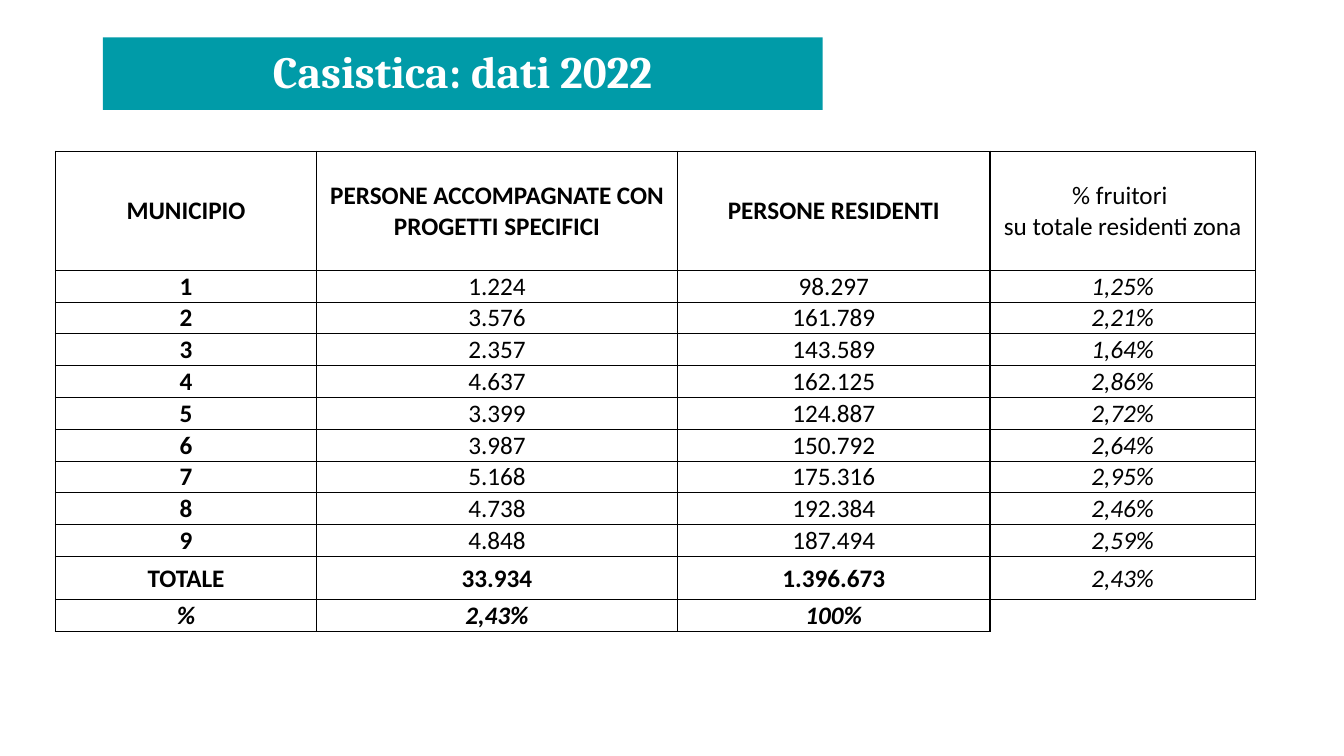
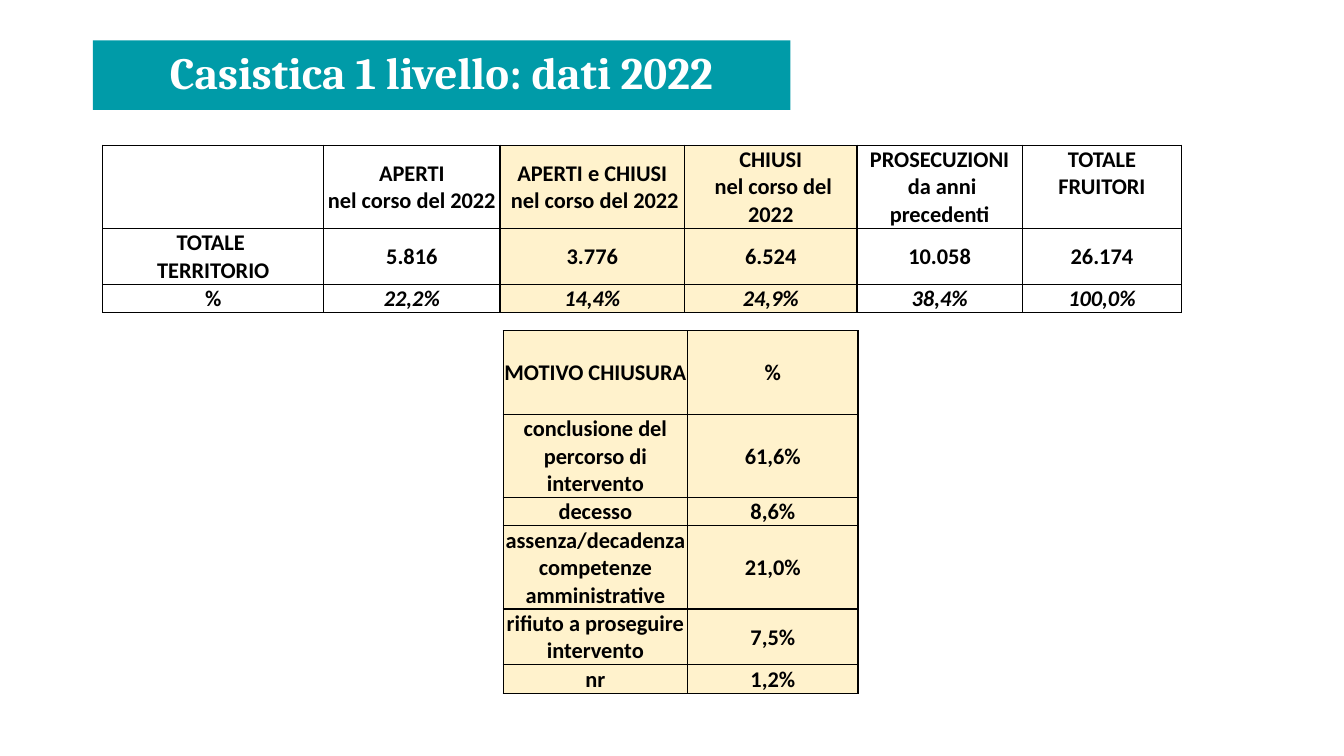
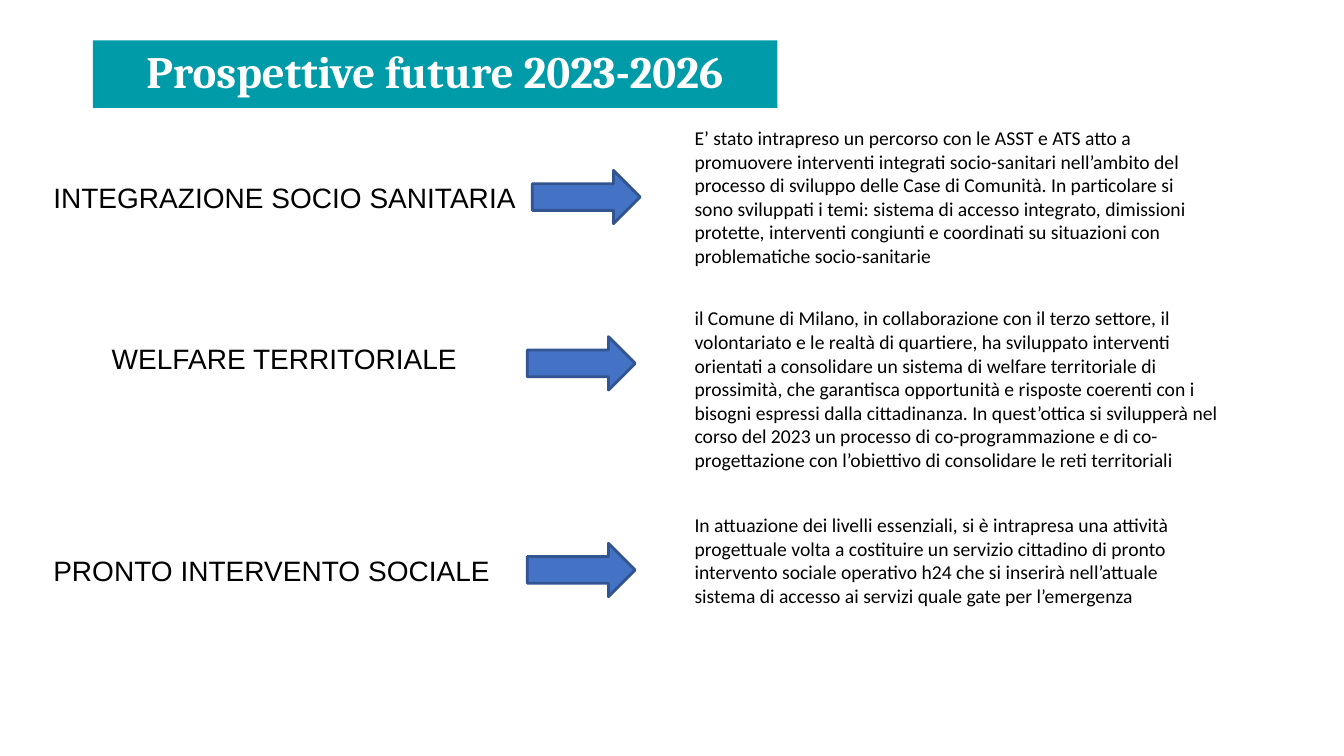
from lxml import etree
from pptx import Presentation
from pptx.dml.color import RGBColor
from pptx.enum import shapes, text
from pptx.oxml.ns import qn
from pptx.util import Inches, Pt

COLORS = {
    "teal": "009BA8",
    "white": "FFFFFF",
    "black": "000000",
    "cream": "FFF2CC",
    "arrow": "4472C4",
    "arrow_line": "325491",
}
THIN, THICK = 0.5, 1


def rgb(name):
    return RGBColor.from_string(COLORS[name])


def add_text(p, content, font, size, color="black", bold=False, italic=False):
    """Write one paragraph, a run for each line."""
    for i, line in enumerate(content.split("\n")):
        if i:
            p.add_line_break()
        r = p.add_run()
        r.text = line
        r.font.name, r.font.size = font, Pt(size)
        r.font.bold, r.font.italic = bold, italic
        r.font.color.rgb = rgb(color)


# Shared title band
def add_title_slide(prs, title, box):
    s = prs.slides.add_slide(prs.slide_layouts[5])
    sp = s.shapes.title
    sp.left, sp.top, sp.width, sp.height = (Inches(v) for v in box)
    sp.fill.solid()
    sp.fill.fore_color.rgb = rgb("teal")
    tf = sp.text_frame
    tf.auto_size = text.MSO_AUTO_SIZE.NONE
    tf.word_wrap = True
    tf.vertical_anchor = text.MSO_ANCHOR.MIDDLE
    p = tf.paragraphs[0]
    p.alignment = text.PP_ALIGN.CENTER
    p.line_spacing = 0.9
    add_text(p, title, "Cambria", 32, "white", bold=True)
    return s


# Tables
def set_borders(cell, left, right, top, bottom):
    tc_pr = cell._tc.get_or_add_tcPr()
    for side, width in zip("LRTB", (left, right, top, bottom)):
        ln = etree.SubElement(tc_pr, qn(f"a:ln{side}"), w=str(int(Pt(width))))
        if width:
            fill = etree.SubElement(ln, qn("a:solidFill"))
            etree.SubElement(fill, qn("a:srgbClr"), val=COLORS["black"])
        else:
            etree.SubElement(ln, qn("a:noFill"))


def fill_cell(cell, content, size, bold, italic, fill):
    cell.margin_left = cell.margin_right = cell.margin_top = Inches(0.01)
    cell.margin_bottom = 0
    cell.vertical_anchor = text.MSO_ANCHOR.MIDDLE
    if fill:
        cell.fill.solid()
        cell.fill.fore_color.rgb = rgb(fill)
    else:
        cell.fill.background()
    if content:
        p = cell.text_frame.paragraphs[0]
        p.alignment = text.PP_ALIGN.CENTER
        add_text(p, content, "Calibri", size, bold=bold, italic=italic)


def add_grid(s, left, top, cols, heights, rows, size, style, borders):
    """style(r, c) gives bold, italic, fill; borders(r, c) gives four widths."""
    frame = s.shapes.add_table(len(rows), len(cols), Inches(left), Inches(top),
                               Inches(sum(cols)), Inches(sum(heights)))
    table = frame.table
    table.first_row = table.horz_banding = False
    for column, width in zip(table.columns, cols):
        column.width = Inches(width)
    for r, (values, height) in enumerate(zip(rows, heights)):
        table.rows[r].height = Inches(height)
        for c, value in enumerate(values):
            cell = table.cell(r, c)
            set_borders(cell, *borders(r, c))
            fill_cell(cell, value, size, *style(r, c))
    return table


def all_thick(r, c):
    return (THICK,) * 4


# Slide 1: cases by district
DISTRICTS = [
    ("MUNICIPIO", "PERSONE ACCOMPAGNATE CON PROGETTI SPECIFICI",
     "PERSONE RESIDENTI", "% fruitori \nsu totale residenti zona"),
    ("1", "1.224", "98.297", "1,25%"),
    ("2", "3.576", "161.789", "2,21%"),
    ("3", "2.357", "143.589", "1,64%"),
    ("4", "4.637", "162.125", "2,86%"),
    ("5", "3.399", "124.887", "2,72%"),
    ("6", "3.987", "150.792", "2,64%"),
    ("7", "5.168", "175.316", "2,95%"),
    ("8", "4.738", "192.384", "2,46%"),
    ("9", "4.848", "187.494", "2,59%"),
    ("TOTALE", "33.934", "1.396.673", "2,43%"),
    ("%", "2,43%", "100%", ""),
]


def district_style(r, c):
    last = len(DISTRICTS) - 1
    bold = c < 3 and (c == 0 or r in (0, last - 1, last))
    italic = r == last or (c == 3 and r > 0)
    return bold, italic, "white" if r == last - 1 else None


def district_borders(r, c):
    last = len(DISTRICTS) - 1
    if (r, c) == (last, 3):
        return THICK, 0, THICK, 0
    return (THIN if c == 2 else THICK,
            THIN if c == 1 else THICK,
            THIN if 1 < r < last - 1 else THICK,
            THIN if 0 < r < last - 2 else THICK)


def build_districts(prs):
    s = add_title_slide(prs, "Casistica: dati 2022", (1.02, 0.37, 7.14, 0.72))
    add_grid(s, 0.55, 1.5, [2.59, 3.58, 3.1, 2.63],
             [1.18] + [0.29] * 9 + [0.43, 0.25],
             DISTRICTS, 18, district_style, district_borders)


# Slide 2: first-level cases and reasons for closing
CASES = [
    ("", "APERTI\nnel corso del 2022", "APERTI e CHIUSI\n nel corso del 2022",
     "CHIUSI\n nel corso del 2022", "PROSECUZIONI\n da anni precedenti",
     "TOTALE FRUITORI"),
    ("TOTALE \nTERRITORIO", "5.816", "3.776", "6.524", "10.058", "26.174"),
    ("%", "22,2%", "14,4%", "24,9%", "38,4%", "100,0%"),
]
REASONS = [
    ("MOTIVO CHIUSURA", "%"),
    ("conclusione del percorso di intervento", "61,6%"),
    ("decesso", "8,6%"),
    ("assenza/decadenza competenze amministrative", "21,0%"),
    ("rifiuto a proseguire intervento", "7,5%"),
    ("nr", "1,2%"),
]


def case_style(r, c):
    fill = "cream" if c in (2, 3) else "white" if r == 1 else None
    return True, r == 2 and c > 0, fill


def reason_style(r, c):
    return True, False, "cream"


def build_cases(prs):
    s = add_title_slide(prs, "Casistica 1 livello: dati 2022",
                        (0.92, 0.4, 6.92, 0.69))
    cases = add_grid(s, 1.02, 1.44, [2.19, 1.75, 1.83, 1.71, 1.64, 1.58],
                     [0.77, 0.49, 0.28], CASES, 16, case_style, all_thick)
    cases.cell(0, 5).vertical_anchor = text.MSO_ANCHOR.TOP
    add_grid(s, 4.99, 3.28, [1.83, 1.69], [0.83, 0.53, 0.27, 0.79, 0.27, 0.27],
             REASONS, 16, reason_style, all_thick)


# Slide 3: future prospects; each box is left, top, width, height
PROSPECTS = [
    ("INTEGRAZIONE SOCIO SANITARIA", (0.43, 1.74, 4.85, 0.44), (5.28, 1.69),
     "E’ stato intrapreso un percorso con le ASST e ATS atto a promuovere "
     "interventi integrati socio-sanitari nell’ambito del processo di sviluppo "
     "delle Case di Comunità. In particolare si sono sviluppati i temi: sistema "
     "di accesso integrato, dimissioni protette, interventi congiunti e "
     "coordinati su situazioni con problematiche socio-sanitarie",
     (6.79, 1.2, 5.23, 1.51)),
    ("WELFARE TERRITORIALE", (1.01, 3.34, 3.68, 0.44), (5.23, 3.34),
     "il Comune di Milano, in collaborazione con il terzo settore, il "
     "volontariato e le realtà di quartiere, ha sviluppato interventi orientati "
     "a consolidare un sistema di welfare territoriale di prossimità, che "
     "garantisca opportunità e risposte coerenti con i bisogni espressi dalla "
     "cittadinanza. In quest’ottica si svilupperà nel corso del 2023 un processo "
     "di co-programmazione e di co-progettazione con l’obiettivo di consolidare "
     "le reti territoriali",
     (6.79, 2.99, 5.41, 1.75)),
    ("PRONTO INTERVENTO SOCIALE", (0.43, 5.44, 4.58, 0.44), (5.23, 5.39),
     "In attuazione dei livelli essenziali, si è intrapresa una attività "
     "progettuale volta a costituire un servizio cittadino di pronto intervento "
     "sociale operativo h24 che si inserirà nell’attuale sistema di accesso ai "
     "servizi quale gate per l’emergenza",
     (6.79, 5.04, 5.41, 1.04)),
]


def add_box(s, content, box, font, size, wrap):
    tf = s.shapes.add_textbox(*(Inches(v) for v in box)).text_frame
    tf.word_wrap = wrap
    tf.auto_size = text.MSO_AUTO_SIZE.SHAPE_TO_FIT_TEXT
    add_text(tf.paragraphs[0], content, font, size)


def add_arrow(s, left, top):
    sp = s.shapes.add_shape(shapes.MSO_SHAPE.RIGHT_ARROW, Inches(left),
                            Inches(top), Inches(1.07), Inches(0.53))
    sp.shadow.inherit = False
    sp.fill.solid()
    sp.fill.fore_color.rgb = rgb("arrow")
    sp.line.color.rgb = rgb("arrow_line")
    sp.line.width = Pt(2)


def build_prospects(prs):
    s = add_title_slide(prs, "Prospettive future 2023-2026",
                        (0.92, 0.4, 6.79, 0.67))
    for label, label_box, arrow_at, body, body_box in PROSPECTS:
        add_box(s, label, label_box, "Arial", 20, wrap=False)
        add_arrow(s, *arrow_at)
        add_box(s, body, body_box, "Calibri", 14, wrap=True)


def main():
    prs = Presentation()
    prs.slide_width, prs.slide_height = Inches(13.33), Inches(7.5)
    build_districts(prs)
    build_cases(prs)
    build_prospects(prs)
    prs.save("out.pptx")


if __name__ == "__main__":
    main()
